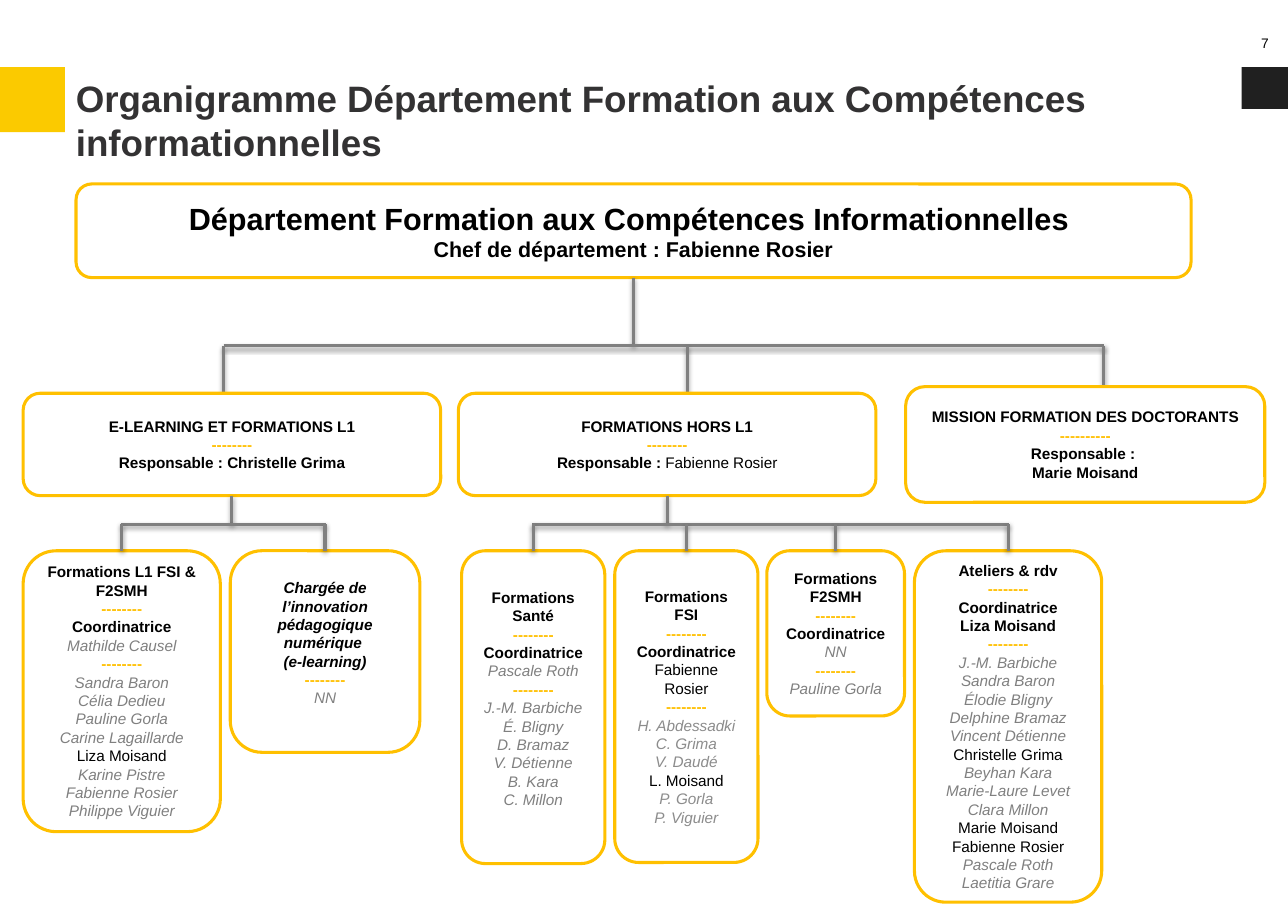
import pptx
import pptx.dml.color
import pptx.enum.shapes
import pptx.enum.text
import pptx.oxml
import pptx.util
from pptx.util import Inches

YELLOW, GREY, LIGHT_GREY, BLACK = "FFC000", "808080", "8C8C8C", "000000"
SHAPE = pptx.enum.shapes.MSO_SHAPE
ALIGN = pptx.enum.text.PP_ALIGN
STYLES = {
    "bold": (BLACK, {"bold": True}),
    "bold italic": (BLACK, {"bold": True, "italic": True}),
    "plain": (BLACK, {"bold": False}),
    "grey": (GREY, {"bold": False, "italic": True}),
    "light": (LIGHT_GREY, {"bold": False, "italic": True}),
    "rule": (YELLOW, {"bold": True}),
    "title": ("333233", {"bold": True}),
}
RULE = ("rule", "--------")
COORDINATOR = ("bold", "Coordinatrice")

UNIT_TOP, TEAM_TOP = 3.57, 5
UNIT_BAR, TEAM_BAR = 3.14, 4.76

# Units: box, x of the line from above, text
UNITS = [
    ((0.21, UNIT_TOP, 3.79, 0.93), 2.03, [
        ("bold", "E-LEARNING ET FORMATIONS L1"), RULE,
        ("bold", "Responsable : Christelle Grima")]),
    ((4.16, UNIT_TOP, 3.79, 0.93), 6.24, [
        ("bold", "FORMATIONS HORS L1"), RULE,
        ("bold", "Responsable : |Fabienne Rosier")]),
    ((8.22, 3.51, 3.26, 1.05), 10.02, [
        ("bold", "MISSION FORMATION DES DOCTORANTS"), ("rule", "----------"),
        ("bold", "Responsable : \nMarie Moisand")]),
]

# Teams of the first two units: left, width, height, bottom inset, text
TEAMS = [
    [(0.21, 1.79, 2.55, 0.05, [
        ("bold", "Formations L1 FSI & F2SMH"), RULE, COORDINATOR,
        ("grey", "Mathilde Causel"), RULE,
        ("grey", "Sandra Baron\nCélia Dedieu\nPauline Gorla\nCarine Lagaillarde"),
        ("plain", "Liza Moisand"),
        ("grey", "Karine Pistre\nFabienne Rosier\nPhilippe Viguier")]),
     (2.09, 1.72, 1.83, 0.21, [
        ("bold italic", "Chargée de l’innovation pédagogique numérique \n(e-learning)"),
        RULE, ("grey", "NN")])],
    [(4.19, 1.3, 2.84, 0.21, [
        ("bold", "Formations Santé"), RULE, COORDINATOR,
        ("grey", "Pascale Roth"), RULE,
        ("grey", "J.-M. Barbiche\nÉ. Bligny\nD. Bramaz\nV. Détienne\nB. Kara\nC. Millon")]),
     (5.58, 1.3, 2.83, 0.05, [
        ("bold", "Formations FSI"), RULE, COORDINATOR,
        ("plain", "Fabienne Rosier"), RULE,
        ("light", "H. Abdessadki\nC. Grima\nV. Daudé"),
        ("plain", "L. Moisand"), ("light", "P. Gorla\nP. Viguier")]),
     (6.96, 1.25, 1.5, 0.05, [
        ("bold", "Formations F2SMH"), RULE, COORDINATOR,
        ("grey", "NN"), RULE, ("grey", "Pauline Gorla")]),
     (8.3, 1.7, 3.19, 0.05, [
        ("bold", "Ateliers & rdv"), RULE, ("bold", "Coordinatrice\nLiza Moisand"), RULE,
        ("grey", "J.-M. Barbiche\nSandra Baron\nÉlodie Bligny\nDelphine Bramaz\nVincent Détienne"),
        ("plain", "Christelle Grima"),
        ("grey", "Beyhan Kara\nMarie-Laure Levet\nClara Millon"),
        ("plain", "Marie Moisand\nFabienne Rosier"),
        ("grey", "Pascale Roth\nLaetitia Grare")])],
]


def rgb(hex_color):
    return pptx.dml.color.RGBColor.from_string(hex_color)


def add_run(p, text, style, size):
    color, values = STYLES[style]
    r = p.add_run()
    r.text = text
    r.font.name, r.font.size = "Arial", pptx.util.Pt(size)
    r.font.color.rgb = rgb(color)
    for name, value in values.items():
        setattr(r.font, name, value)


def write(sp, groups, sizes=(10,), align=ALIGN.CENTER, bottom=0.05):
    """Write one paragraph per line; a part after "|" is plain."""
    tf = sp.text_frame
    tf.word_wrap = True
    tf.vertical_anchor = pptx.enum.text.MSO_ANCHOR.MIDDLE
    tf.margin_bottom = Inches(bottom)
    lines = [(style, line) for style, text in groups for line in text.split("\n")]
    for i, (style, line) in enumerate(lines):
        p = tf.paragraphs[0] if i == 0 else tf.add_paragraph()
        p.alignment = align
        size = sizes[min(i, len(sizes) - 1)]
        for part, part_style in zip(line.split("|"), (style, "plain")):
            add_run(p, part, part_style, size)


def add_block(s, box, kind, fill, line=None):
    sp = s.shapes.add_shape(kind, *map(Inches, box))
    sp.shadow.inherit = False
    sp.fill.solid()
    sp.fill.fore_color.rgb = rgb(fill)
    if line:
        sp.line.color.rgb = rgb(line)
        sp.line.width = pptx.util.Pt(2)
    else:
        sp.line.fill.background()
    return sp


def add_box(s, box, groups, **options):
    sp = add_block(s, box, SHAPE.ROUNDED_RECTANGLE, "FFFFFF", YELLOW)
    sp.adjustments[0] = 0.167
    write(sp, groups, **options)
    return sp


def add_line(s, x1, y1, x2, y2):
    """Draw a grey line with a soft shadow below it."""
    c = s.shapes.add_connector(pptx.enum.shapes.MSO_CONNECTOR.STRAIGHT,
                               *map(Inches, (x1, y1, x2, y2)))
    c.line.color.rgb = rgb(GREY)
    c.line.width = pptx.util.Pt(2)
    c._element.spPr.append(pptx.oxml.parse_xml(
        '<a:effectLst xmlns:a="http://schemas.openxmlformats.org/drawingml/2006/main">'
        '<a:outerShdw blurRad="39370" dist="20320" dir="5400000" rotWithShape="0">'
        '<a:srgbClr val="000000"><a:alpha val="38000"/></a:srgbClr>'
        '</a:outerShdw></a:effectLst>'))
    return c


def add_trunk(s, parent, box, bar):
    left, top, width, height = box
    x = left + width / 2
    add_line(s, x, top + height, x, bar).begin_connect(parent, 2)


def add_header(s, box):
    left, top, width, height = box
    add_block(s, (left, top, 0.59, 0.59), SHAPE.RECTANGLE, "FBCA00")
    add_block(s, (left + width - 0.42, top, 0.42, 0.38), SHAPE.RECTANGLE, "202020")
    number = s.shapes.add_textbox(*map(Inches, (left + width - 0.42, top - 0.44, 0.42, 0.44)))
    write(number, [("plain", "7")], sizes=(9,))
    title = s.shapes.add_textbox(*map(Inches, (left + 0.59, top, width - 0.6, height)))
    write(title, [("title", "Organigramme Département Formation aux Compétences informationnelles")],
          sizes=(24,), align=ALIGN.LEFT)


def add_department(s, box):
    sp = add_box(s, box, [
        ("bold", "Département Formation aux Compétences Informationnelles \n"
                 "Chef de département : Fabienne Rosier")], sizes=(20, 14))
    add_trunk(s, sp, box, UNIT_BAR)


def add_units(s):
    """Draw the units under their bar and return their shapes."""
    xs = [x for _, x, _ in UNITS]
    add_line(s, xs[0], UNIT_BAR, xs[-1], UNIT_BAR)
    for box, x, _ in UNITS:
        add_line(s, x, UNIT_BAR, x, box[1])
    return [add_box(s, box, groups) for box, _, groups in UNITS]


def add_teams(s, unit, unit_box, teams):
    add_trunk(s, unit, unit_box, TEAM_BAR)
    xs = [left + width / 2 for left, width, *_ in teams]
    add_line(s, xs[0] - 0.01, TEAM_BAR, xs[-1] + 0.01, TEAM_BAR)
    for x, (left, width, height, bottom, groups) in zip(xs, teams):
        sp = add_box(s, (left, TEAM_TOP, width, height), groups, bottom=bottom)
        add_line(s, x, TEAM_BAR, x, TEAM_TOP).end_connect(sp, 0)


def main():
    prs = pptx.Presentation()
    prs.slide_width, prs.slide_height = Inches(11.69), Inches(8.27)
    s = prs.slides.add_slide(prs.slide_layouts[6])
    add_header(s, (0, 0.61, 11.69, 0.96))
    add_department(s, (0.69, 1.67, 10.12, 0.85))
    units = add_units(s)
    for unit, (box, _, _), teams in zip(units, UNITS, TEAMS):
        add_teams(s, unit, box, teams)
    prs.save("out.pptx")


if __name__ == "__main__":
    main()
